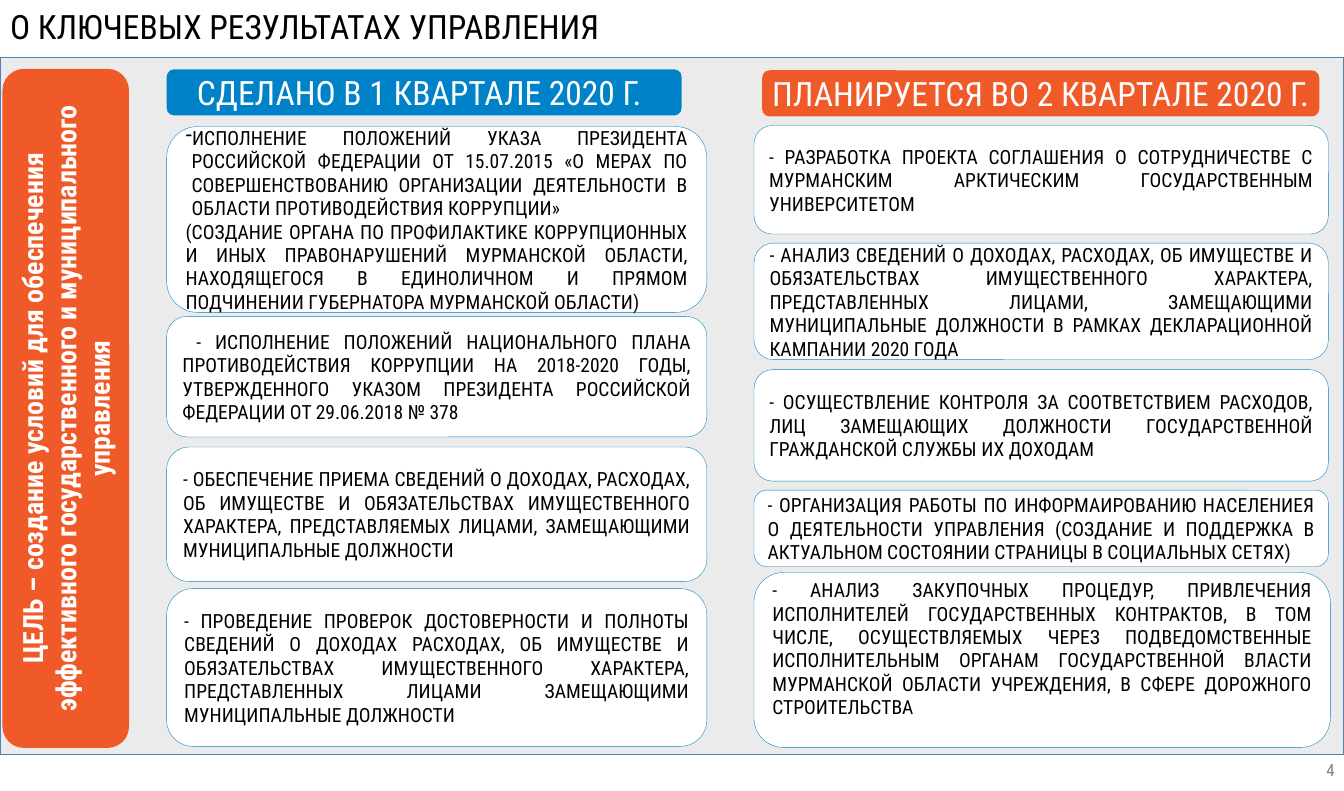
from pptx import Presentation
from pptx.dml.color import RGBColor
from pptx.enum.shapes import MSO_SHAPE
from pptx.enum.text import MSO_ANCHOR, MSO_AUTO_SIZE, PP_ALIGN
from pptx.oxml.ns import qn
from pptx.util import Inches, Pt

FONT = "Roboto Condensed"
WHITE = RGBColor(0xFF, 0xFF, 0xFF)
BLACK = RGBColor(0, 0, 0)
GREY = RGBColor(0x80, 0x80, 0x80)
PANEL = RGBColor(0xEB, 0xEB, 0xEB)
PANEL_LINE = RGBColor(0x4F, 0x81, 0xBD)
BLUE = RGBColor(0, 0x82, 0xC8)
ORANGE = RGBColor(0xF0, 0x5A, 0x28)
CENTIMETRES_PER_INCH = 2.54

TITLE = "О КЛЮЧЕВЫХ РЕЗУЛЬТАТАХ УПРАВЛЕНИЯ"
GOAL = "ЦЕЛЬ – создание условий для обеспечения эффективного государственного и муниципального управления"
DONE_CARDS = [
    (0.57, 1.85, [
        "ИСПОЛНЕНИЕ ПОЛОЖЕНИЙ УКАЗА ПРЕЗИДЕНТА РОССИЙСКОЙ ФЕДЕРАЦИИ ОТ 15.07.2015 «О МЕРАХ ПО СОВЕРШЕНСТВОВАНИЮ ОРГАНИЗАЦИИ ДЕЯТЕЛЬНОСТИ В ОБЛАСТИ ПРОТИВОДЕЙСТВИЯ КОРРУПЦИИ»",
        "(СОЗДАНИЕ ОРГАНА ПО ПРОФИЛАКТИКЕ КОРРУПЦИОННЫХ И ИНЫХ ПРАВОНАРУШЕНИЙ МУРМАНСКОЙ ОБЛАСТИ, НАХОДЯЩЕГОСЯ В ЕДИНОЛИЧНОМ И ПРЯМОМ ПОДЧИНЕНИИ ГУБЕРНАТОРА МУРМАНСКОЙ ОБЛАСТИ)",
    ]),
    (2.46, 1.2, [" - ИСПОЛНЕНИЕ ПОЛОЖЕНИЙ НАЦИОНАЛЬНОГО ПЛАНА ПРОТИВОДЕЙСТВИЯ КОРРУПЦИИ НА 2018-2020 ГОДЫ, УТВЕРЖДЕННОГО УКАЗОМ ПРЕЗИДЕНТА РОССИЙСКОЙ ФЕДЕРАЦИИ ОТ 29.06.2018 № 378"]),
    (3.76, 1.34, ["- ОБЕСПЕЧЕНИЕ ПРИЕМА СВЕДЕНИЙ О ДОХОДАХ, РАСХОДАХ, ОБ ИМУЩЕСТВЕ И ОБЯЗАТЕЛЬСТВАХ ИМУЩЕСТВЕННОГО ХАРАКТЕРА, ПРЕДСТАВЛЯЕМЫХ ЛИЦАМИ, ЗАМЕЩАЮЩИМИ МУНИЦИПАЛЬНЫЕ ДОЛЖНОСТИ"]),
    (5.17, 1.57, ["- ПРОВЕДЕНИЕ ПРОВЕРОК ДОСТОВЕРНОСТИ И ПОЛНОТЫ СВЕДЕНИЙ О ДОХОДАХ РАСХОДАХ, ОБ ИМУЩЕСТВЕ И ОБЯЗАТЕЛЬСТВАХ ИМУЩЕСТВЕННОГО ХАРАКТЕРА, ПРЕДСТАВЛЕННЫХ ЛИЦАМИ ЗАМЕЩАЮЩИМИ МУНИЦИПАЛЬНЫЕ ДОЛЖНОСТИ"]),
]
PLANNED_CARDS = [
    (0.56, 1.08, ["- РАЗРАБОТКА ПРОЕКТА СОГЛАШЕНИЯ О СОТРУДНИЧЕСТВЕ С МУРМАНСКИМ АРКТИЧЕСКИМ ГОСУДАРСТВЕННЫМ УНИВЕРСИТЕТОМ"]),
    (1.73, 1.16, ["- АНАЛИЗ СВЕДЕНИЙ О ДОХОДАХ, РАСХОДАХ, ОБ ИМУЩЕСТВЕ И ОБЯЗАТЕЛЬСТВАХ ИМУЩЕСТВЕННОГО ХАРАКТЕРА, ПРЕДСТАВЛЕННЫХ ЛИЦАМИ, ЗАМЕЩАЮЩИМИ МУНИЦИПАЛЬНЫЕ ДОЛЖНОСТИ В РАМКАХ ДЕКЛАРАЦИОННОЙ КАМПАНИИ 2020 ГОДА"]),
    (2.99, 1.11, ["- ОСУЩЕСТВЛЕНИЕ КОНТРОЛЯ ЗА СООТВЕТСТВИЕМ РАСХОДОВ, ЛИЦ ЗАМЕЩАЮЩИХ ДОЛЖНОСТИ ГОСУДАРСТВЕННОЙ ГРАЖДАНСКОЙ СЛУЖБЫ ИХ ДОХОДАМ"]),
    (4.19, 0.76, ["- ОРГАНИЗАЦИЯ РАБОТЫ ПО ИНФОРМАИРОВАНИЮ НАСЕЛЕНИЕЯ О ДЕЯТЕЛЬНОСТИ УПРАВЛЕНИЯ (СОЗДАНИЕ И ПОДДЕРЖКА В АКТУАЛЬНОМ СОСТОЯНИИ СТРАНИЦЫ В СОЦИАЛЬНЫХ СЕТЯХ)"]),
    (5.01, 1.74, ["- АНАЛИЗ ЗАКУПОЧНЫХ ПРОЦЕДУР, ПРИВЛЕЧЕНИЯ ИСПОЛНИТЕЛЕЙ ГОСУДАРСТВЕННЫХ КОНТРАКТОВ, В ТОМ ЧИСЛЕ, ОСУЩЕСТВЛЯЕМЫХ ЧЕРЕЗ ПОДВЕДОМСТВЕННЫЕ ИСПОЛНИТЕЛЬНЫМ ОРГАНАМ ГОСУДАРСТВЕННОЙ ВЛАСТИ МУРМАНСКОЙ ОБЛАСТИ УЧРЕЖДЕНИЯ, В СФЕРЕ ДОРОЖНОГО СТРОИТЕЛЬСТВА"]),
]


def add_box(slide, kind, left, top, width, height, fill, line=None, weight=1):
    """Add a flat filled shape, outlined only when a line colour is given."""
    shape = slide.shapes.add_shape(kind, Inches(left), Inches(top), Inches(width), Inches(height))
    shape.shadow.inherit = False
    shape.fill.solid()
    shape.fill.fore_color.rgb = fill
    if line is None:
        shape.line.fill.background()
    else:
        shape.line.color.rgb = line
        shape.line.width = Pt(weight)
    return shape


def write(shape, texts, size, color, align, anchor=MSO_ANCHOR.MIDDLE, bold=False):
    """Fill a shape with one formatted paragraph per text."""
    frame = shape.text_frame
    frame.word_wrap = True
    frame.auto_size = MSO_AUTO_SIZE.NONE
    frame.vertical_anchor = anchor
    for index, text in enumerate(texts):
        paragraph = frame.add_paragraph() if index else frame.paragraphs[0]
        paragraph.alignment = align
        run = paragraph.add_run()
        run.text = text
        run.font.name = FONT
        run.font.size = Pt(size)
        run.font.bold = bold
        run.font.color.rgb = color
    return frame


def add_dash_bullet(paragraph):
    """Give a paragraph a hanging dash bullet in the font of its text."""
    properties = paragraph._p.get_or_add_pPr()
    properties.set("marL", str(Inches(0.06)))
    properties.set("indent", str(Inches(-0.31)))
    properties.append(properties.makeelement(qn("a:buFontTx"), {}))
    properties.append(properties.makeelement(qn("a:buChar"), {"char": "-"}))


def add_title(slide, left, top, width, height):
    """Place and format the title placeholder."""
    title = slide.shapes.title
    title.left, title.top = Inches(left), Inches(top)
    title.width, title.height = Inches(width), Inches(height)
    write(title, [TITLE], 24, BLACK, PP_ALIGN.LEFT, MSO_ANCHOR.TOP)


def add_goal(slide, left, top, width, height):
    """Add the goal banner, turned to read upwards inside its upright box."""
    banner = add_box(slide, MSO_SHAPE.ROUNDED_RECTANGLE, left + (width - height) / 2,
                     top + (height - width) / 2, height, width, ORANGE, ORANGE, 0.75)
    banner.rotation = 270
    frame = write(banner, [GOAL], 20, WHITE, PP_ALIGN.CENTER, MSO_ANCHOR.TOP, True)
    frame.margin_left = frame.margin_right = Inches(0.12)
    frame.margin_top = frame.margin_bottom = Inches(0.06)


def add_header(slide, left, top, width, text, color, align, margin):
    """Add the coloured heading bar of a column."""
    bar = add_box(slide, MSO_SHAPE.ROUNDED_RECTANGLE, left, top, width, 0.46, color)
    frame = write(bar, [text], 24, WHITE, align)
    frame.margin_left = Inches(margin)
    frame.margin_right = frame.margin_top = frame.margin_bottom = 0


def add_cards(slide, left, top, width, cards):
    """Add a column of cards and return them."""
    shapes = []
    for offset, height, texts in cards:
        card = add_box(slide, MSO_SHAPE.ROUNDED_RECTANGLE, left, top + offset,
                       width, height, WHITE, BLUE, 0.25)
        write(card, texts, 14, BLACK, PP_ALIGN.JUSTIFY)
        shapes.append(card)
    return shapes


def add_done_column(slide, left, top, width):
    """Add the results of the first quarter."""
    add_header(slide, left, top, 5.13, "СДЕЛАНО В 1 КВАРТАЛЕ 2020 Г.", BLUE, PP_ALIGN.LEFT, 0.28)
    cards = add_cards(slide, left, top, width, DONE_CARDS)
    add_dash_bullet(cards[0].text_frame.paragraphs[0])


def add_planned_column(slide, left, top, width):
    """Add the plans for the second quarter."""
    add_header(slide, left + 0.08, top + 0.01, 5.55, "ПЛАНИРУЕТСЯ ВО 2 КВАРТАЛЕ 2020 Г.",
               ORANGE, PP_ALIGN.CENTER, 0)
    cards = add_cards(slide, left, top, width, PLANNED_CARDS)
    cards[-1].width = Inches(width + 0.02)
    cards[-1].text_frame.margin_bottom = Inches(0.28)


def add_slide_number(slide, left, top, width, height):
    """Add the slide number at the right of its box."""
    number = slide.shapes.add_textbox(Inches(left), Inches(top), Inches(width), Inches(height))
    write(number, ["4"], 12, GREY, PP_ALIGN.RIGHT)


def main():
    """Build and save the slide."""
    presentation = Presentation()
    presentation.slide_width = Inches(34 / CENTIMETRES_PER_INCH)
    presentation.slide_height = Inches(20 / CENTIMETRES_PER_INCH)
    slide = presentation.slides.add_slide(presentation.slide_layouts[5])
    add_box(slide, MSO_SHAPE.RECTANGLE, 0, 0.57, 13.38, 6.94, PANEL, PANEL_LINE)
    add_title(slide, 0, 0.01, 13.38, 0.5)
    add_goal(slide, 0.03, 0.69, 1.25, 6.75)
    add_done_column(slide, 1.66, 0.69, 5.38)
    add_planned_column(slide, 7.51, 0.69, 5.72)
    add_slide_number(slide, 11.02, 7.45, 2.37, 0.42)
    presentation.save("out.pptx")


if __name__ == "__main__":
    main()
